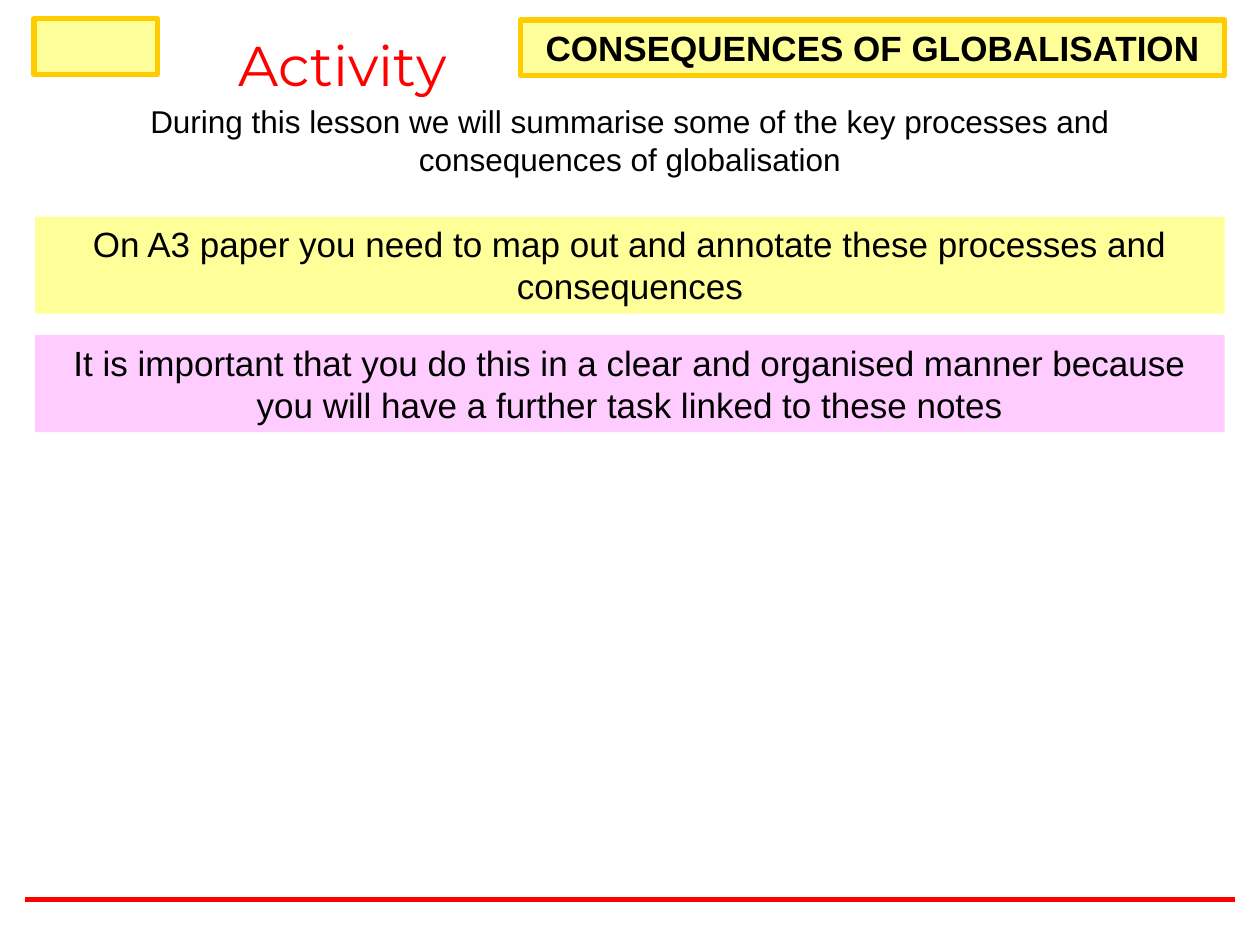
"""Builds the activity slide on the consequences of globalisation."""
from dataclasses import dataclass
from typing import Optional

from lxml import etree
from pptx import Presentation
from pptx import util as u
from pptx.dml.color import RGBColor
from pptx.enum import shapes, text
from pptx.oxml.ns import qn

WIDTH, HEIGHT = u.Inches(10), u.Inches(7.5)
COLOURS = {"ink": "000000", "red": "FF0000", "yellow": "FFFF99",
           "gold": "FFCC00", "pink": "FFCCFF"}
MARGIN = 0.28 / 10
BODY_WIDTH = 1 - 2 * MARGIN
BORDER = u.Pt(3)


@dataclass
class Panel:
    left: float
    top: float
    width: float
    height: float
    words: str = ""
    size: int = 20
    bold: bool = False
    fill: Optional[str] = None
    line: Optional[str] = None


TITLE = Panel(0.138, 0.19 / 7.5, 0.268, 0.4 / 7.5, "Activity", 32)
PANELS = [
    Panel(0.413, 0.16 / 7.5, 0.559, 0.44 / 7.5, "CONSEQUENCES OF GLOBALISATION",
          bold=True, fill="yellow", line="gold"),
    Panel(0.027, 0.02, 0.098, 0.44 / 7.5, fill="yellow", line="gold"),
    Panel(MARGIN, 0.76 / 7.5, BODY_WIDTH, 0.71 / 7.5,
          "During this lesson we will summarise some of the key processes and "
          "consequences of globalisation", size=18),
    Panel(MARGIN, 1.72 / 7.5, BODY_WIDTH, 0.77 / 7.5,
          "On A3 paper you need to map out and annotate these processes and "
          "consequences", fill="yellow"),
    Panel(MARGIN, 2.66 / 7.5, BODY_WIDTH, 0.77 / 7.5,
          "It is important that you do this in a clear and organised manner "
          "because you will have a further task linked to these notes", fill="pink"),
]


def colour(name: str) -> RGBColor:
    return RGBColor.from_string(COLOURS[name])


def bounds(panel: Panel) -> tuple:
    return (u.Emu(round(panel.left * WIDTH)), u.Emu(round(panel.top * HEIGHT)),
            u.Emu(round(panel.width * WIDTH)), u.Emu(round(panel.height * HEIGHT)))


def write(box, words: str, *, size: int, font: str = "Arial", ink: str = "ink",
          bold: bool = False, wrap: bool = True) -> None:
    frame = box.text_frame
    frame.word_wrap = wrap
    frame.auto_size = text.MSO_AUTO_SIZE.NONE
    frame.vertical_anchor = text.MSO_ANCHOR.TOP
    para = frame.paragraphs[0]
    para.alignment = text.PP_ALIGN.CENTER
    span = para.add_run()
    span.text = words
    span.font.name, span.font.size, span.font.bold = font, u.Pt(size), bold
    span.font.color.rgb = colour(ink)


def draw_panel(page, panel: Panel) -> None:
    if panel.fill:
        box = page.shapes.add_shape(shapes.MSO_SHAPE.RECTANGLE, *bounds(panel))
        box.shadow.inherit = False
        box.fill.solid()
        box.fill.fore_color.rgb = colour(panel.fill)
        if panel.line:
            box.line.color.rgb = colour(panel.line)
            box.line.width = BORDER
        else:
            box.line.fill.background()
    else:
        box = page.shapes.add_textbox(*bounds(panel))
    if panel.words:
        write(box, panel.words, size=panel.size, bold=panel.bold)


def draw_title(page, panel: Panel) -> None:
    title = page.shapes.title
    title.left, title.top, title.width, title.height = bounds(panel)
    write(title, panel.words, size=panel.size, font="Montserrat", ink="red", wrap=False)


def draw_footer_rule(page) -> None:
    level = round(HEIGHT * 0.952)
    rule = page.shapes.add_connector(shapes.MSO_CONNECTOR.STRAIGHT, round(WIDTH * 0.98),
                                     level, round(WIDTH * 0.02), level)
    rule.line.color.rgb = colour("red")
    rule.line.width = BORDER
    etree.SubElement(rule._element.spPr, qn("a:effectLst"))


def main() -> None:
    deck = Presentation()
    deck.slide_width, deck.slide_height = WIDTH, HEIGHT
    page = deck.slides.add_slide(deck.slide_layouts.get_by_name("Title Only"))
    draw_title(page, TITLE)
    for panel in PANELS:
        draw_panel(page, panel)
    draw_footer_rule(page)
    deck.save("out.pptx")


if __name__ == "__main__":
    main()
